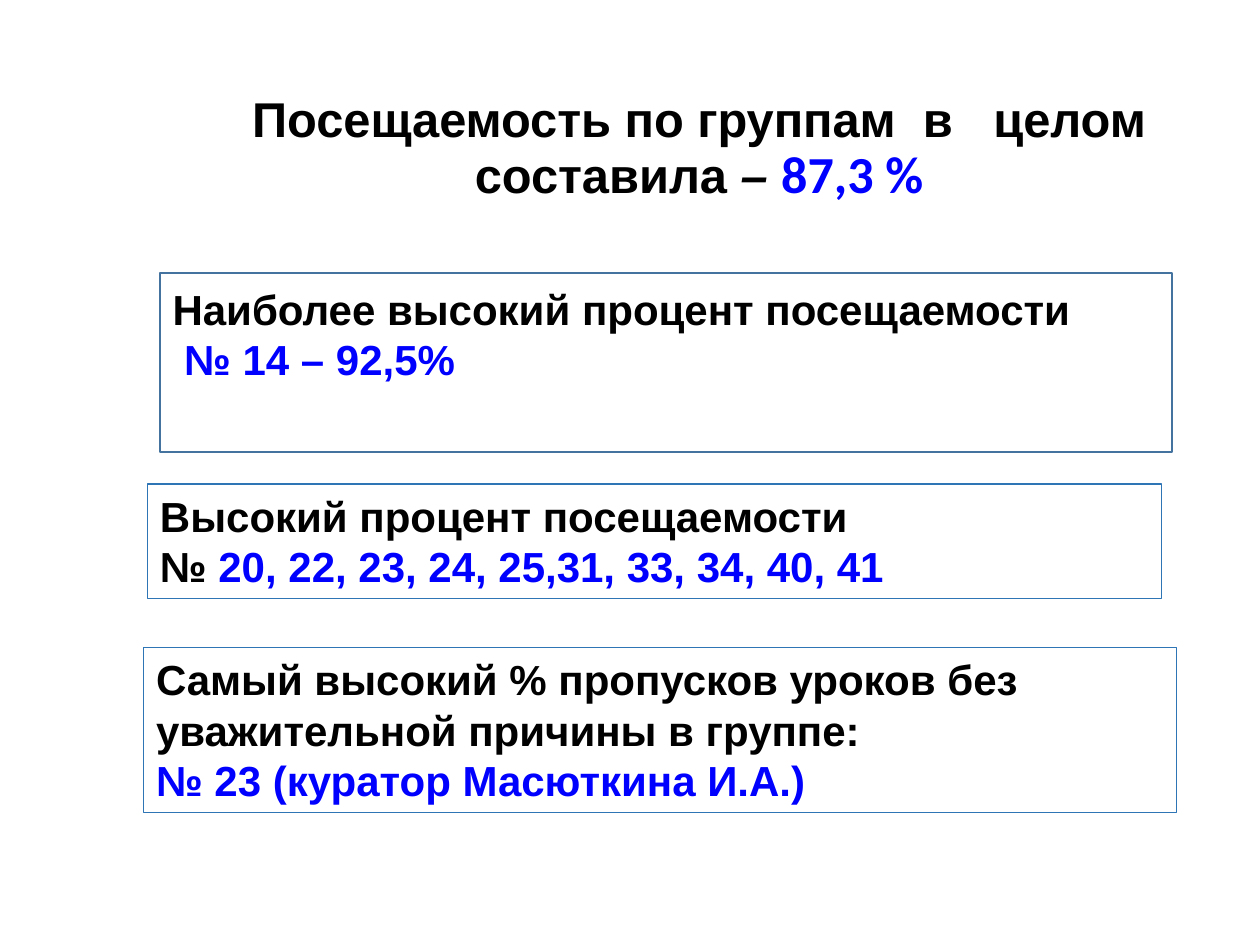
"""Build the group attendance slide."""
from dataclasses import dataclass

from pptx import Presentation
from pptx.dml.color import RGBColor
from pptx.enum.shapes import MSO_SHAPE
from pptx.enum.text import MSO_ANCHOR, MSO_AUTO_SIZE, PP_ALIGN
from pptx.util import Pt

COLORS = {"text": "000000", "value": "0000FF", "outline": "2E75B6", "frame": "43739E"}


@dataclass
class Area:
    left: float
    top: float
    width: float
    height: float

    def lengths(self) -> tuple:
        return Pt(self.left), Pt(self.top), Pt(self.width), Pt(self.height)


@dataclass
class Span:
    text: str
    color: str = "text"
    size: float = 24
    font: str = "Arial"
    italic: bool = False


@dataclass
class Panel:
    area: Area
    lines: list[list[Span]]


TITLE_AREA = Area(131, 66.2, 537.1, 73.5)
TITLE = [
    Span("Посещаемость по группам  в   целом составила ", size=27.9),
    Span("– ", size=27.9, italic=True),
    Span("87,3 %", "value", 29.7, "Calibri"),
]
FRAME_AREA = Area(91.5, 156.2, 578.2, 102.2)
HIGHEST = Panel(
    Area(91.5, 158.4, 572.4, 87.1),
    [
        [Span("Наиболее высокий процент посещаемости")],
        [Span(" № 14 – 92,5%", "value")],
    ],
)
OUTLINED_PANELS = [
    Panel(
        Area(82.1, 370.1, 590.4, 94.3),
        [
            [Span("Самый высокий % пропусков уроков без уважительной причины в группе:")],
            [Span("№ 23 (куратор Масюткина И.А.)", "value")],
        ],
    ),
    Panel(
        Area(84.3, 276.5, 579.6, 65.5),
        [
            [Span("Высокий процент посещаемости")],
            [Span("№ "), Span("20, 22, 23, 24, 25,31, 33, 34, 40, 41", "value")],
        ],
    ),
]


def add_spans(para, spans: list[Span]) -> None:
    """Add each span to the paragraph as a bold run."""
    for span in spans:
        run = para.add_run()
        run.text = span.text
        run.font.name = span.font
        run.font.size = Pt(span.size)
        run.font.bold = True
        run.font.italic = span.italic
        run.font.color.rgb = RGBColor.from_string(COLORS[span.color])


def fill_title(title) -> None:
    """Place and fill the title, with a deep bottom inset that raises its text."""
    title.left, title.top, title.width, title.height = TITLE_AREA.lengths()
    frame = title.text_frame
    frame.word_wrap = True
    frame.auto_size = MSO_AUTO_SIZE.NONE
    frame.vertical_anchor = MSO_ANCHOR.MIDDLE
    frame.margin_bottom = Pt(38)
    para = frame.paragraphs[0]
    para.alignment = PP_ALIGN.CENTER
    para.line_spacing = 0.9
    add_spans(para, TITLE)


def add_outline(page, area: Area, color: str, weight: float):
    """Add an unfilled rectangle with a coloured line."""
    box = page.shapes.add_shape(MSO_SHAPE.RECTANGLE, *area.lengths())
    box.shadow.inherit = False
    box.fill.background()
    box.line.color.rgb = RGBColor.from_string(COLORS[color])
    box.line.width = Pt(weight)
    return box


def fill_panel(box, lines: list[list[Span]]) -> None:
    """Write the lines into the box, left aligned from its top."""
    frame = box.text_frame
    frame.word_wrap = True
    frame.auto_size = MSO_AUTO_SIZE.SHAPE_TO_FIT_TEXT
    frame.vertical_anchor = MSO_ANCHOR.TOP
    for index, spans in enumerate(lines):
        para = frame.add_paragraph() if index else frame.paragraphs[0]
        para.alignment = PP_ALIGN.LEFT
        add_spans(para, spans)


def main() -> None:
    """Create and save the deck."""
    deck = Presentation()
    deck.slide_width, deck.slide_height = Pt(720), Pt(540)
    page = deck.slides.add_slide(deck.slide_layouts[5])
    fill_title(page.shapes.title)
    for panel in OUTLINED_PANELS:
        fill_panel(add_outline(page, panel.area, "outline", 0.75), panel.lines)
    add_outline(page, FRAME_AREA, "frame", 1)
    fill_panel(page.shapes.add_textbox(*HIGHEST.area.lengths()), HIGHEST.lines)
    deck.save("out.pptx")


if __name__ == "__main__":
    main()
